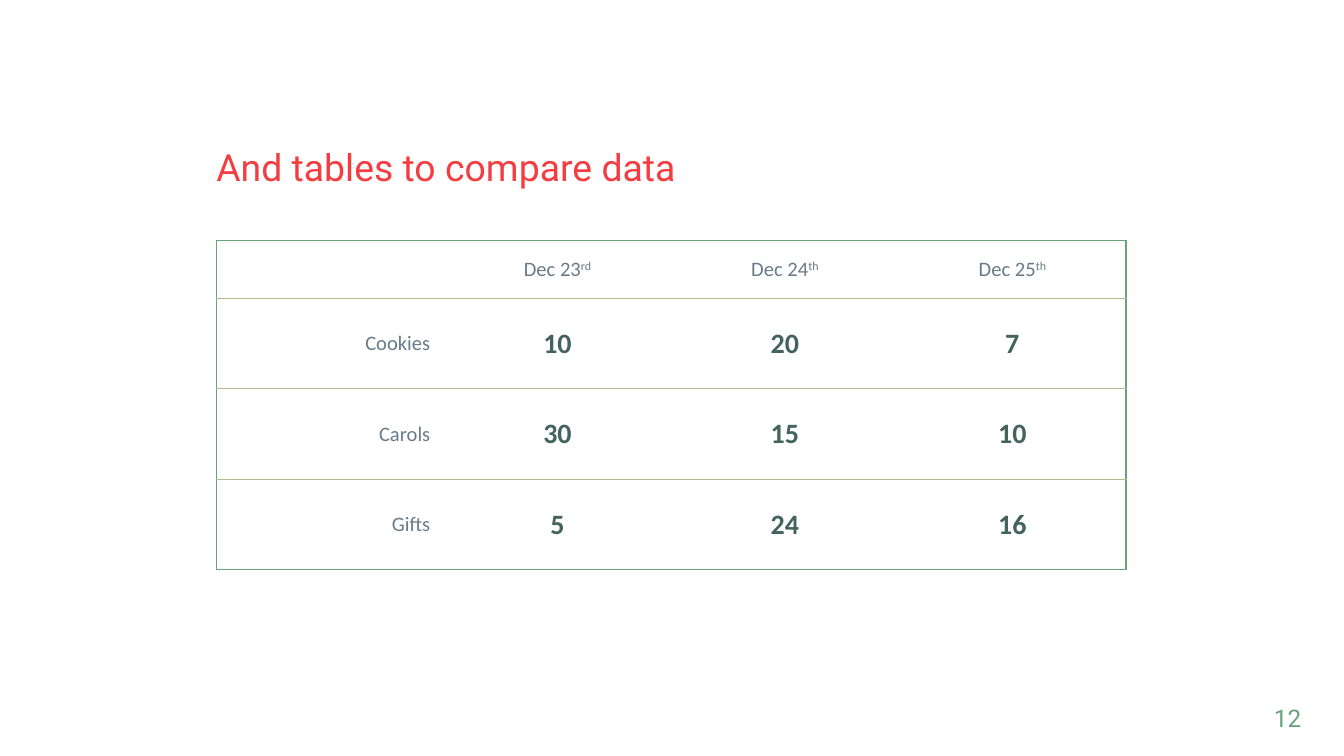
from typing import NamedTuple

from lxml import etree
from pptx import Presentation
from pptx.dml.color import RGBColor
from pptx.enum import text
from pptx.oxml import ns
from pptx.util import Inches, Pt

RED, GREEN, LIME = "F33D41", "68A27A", "ABC08E"
GREY, DARK_GREEN = "667C89", "43635C"
ALIGN = text.PP_ALIGN


class Style(NamedTuple):
    font: str
    size: float
    color: str
    bold: bool = False


class TableRow(NamedTuple):
    label: str
    values: tuple[int, ...]


TITLE = Style("Roboto", 20, RED)
PAGE_NUMBER = Style("Roboto", 13, GREEN)
LABEL = Style("Calibri", 11, GREY)
VALUE = Style("Calibri", 15, DARK_GREEN, True)

DAYS = [("Dec 23", "rd"), ("Dec 24", "th"), ("Dec 25", "th")]
ROWS = [
    TableRow("Cookies", (10, 20, 7)),
    TableRow("Carols", (30, 15, 10)),
    TableRow("Gifts", (5, 24, 16)),
]
SLIDE_WIDTH = 10
TABLE_LEFT, TABLE_TOP, TABLE_WIDTH, TABLE_HEIGHT = 1.61, 1.79, 6.77, 2.45
HEADER_HEIGHT = 0.43


def rgb(color: str) -> RGBColor:
    return RGBColor.from_string(color)


def format_font(font, style: Style) -> None:
    font.name = style.font
    font.size = Pt(style.size)
    font.bold = style.bold
    font.color.rgb = rgb(style.color)


def add_text(slide, box: tuple, content: str, style: Style, alignment,
             anchor, inset: float) -> None:
    shape = slide.shapes.add_textbox(*(Inches(length) for length in box))
    frame = shape.text_frame
    frame.word_wrap = True
    frame.vertical_anchor = anchor
    frame.margin_left = frame.margin_right = Inches(inset)
    frame.margin_top = frame.margin_bottom = Inches(inset)
    frame.text = content
    paragraph = frame.paragraphs[0]
    paragraph.alignment = alignment
    if style is TITLE:
        paragraph.line_spacing = 0.9
    format_font(paragraph.runs[0].font, style)


def set_border(cell, side: str, color: str | None) -> None:
    properties = cell._tc.get_or_add_tcPr()
    line = etree.SubElement(properties, ns.qn(f"a:ln{side}"), w=str(Pt(0.75)))
    if color is None:
        etree.SubElement(line, ns.qn("a:noFill"))
    else:
        fill = etree.SubElement(line, ns.qn("a:solidFill"))
        etree.SubElement(fill, ns.qn("a:srgbClr"), val=color)


def fill_cell(cell, content: str, style: Style, alignment, suffix: str = "") -> None:
    cell.vertical_anchor = text.MSO_ANCHOR.MIDDLE
    cell.margin_left = cell.margin_right = Inches(0.1)
    cell.margin_top = cell.margin_bottom = Inches(0.07)
    paragraph = cell.text_frame.paragraphs[0]
    paragraph.text = content
    paragraph.alignment = alignment
    if suffix:
        superscript = paragraph.add_run()
        superscript.text = suffix
        superscript._r.get_or_add_rPr().set("baseline", "30000")
    format_font(paragraph.font, style)
    for run in paragraph.runs:
        format_font(run.font, style)


def add_comparison_table(slide) -> None:
    row_count, column_count = len(ROWS) + 1, len(DAYS) + 1
    table = slide.shapes.add_table(
        row_count, column_count, Inches(TABLE_LEFT), Inches(TABLE_TOP),
        Inches(TABLE_WIDTH), Inches(TABLE_HEIGHT)).table
    table.first_row = table.horz_banding = False
    row_height = (TABLE_HEIGHT - HEADER_HEIGHT) / len(ROWS)
    for index, row in enumerate(table.rows):
        row.height = Inches(row_height if index else HEADER_HEIGHT)

    # Header row
    fill_cell(table.cell(0, 0), "", LABEL, ALIGN.RIGHT)
    for column, (day, suffix) in enumerate(DAYS, 1):
        fill_cell(table.cell(0, column), day, LABEL, ALIGN.CENTER, suffix)

    # Labels and values
    for index, row in enumerate(ROWS, 1):
        fill_cell(table.cell(index, 0), row.label, LABEL, ALIGN.RIGHT)
        for column, value in enumerate(row.values, 1):
            fill_cell(table.cell(index, column), str(value), VALUE, ALIGN.CENTER)

    # Green frame, lime lines between rows
    for row in range(row_count):
        for column in range(column_count):
            cell = table.cell(row, column)
            set_border(cell, "L", GREEN if column == 0 else None)
            set_border(cell, "R", GREEN if column == column_count - 1 else None)
            set_border(cell, "T", GREEN if row == 0 else LIME)
            set_border(cell, "B", GREEN if row == row_count - 1 else LIME)
            cell.fill.background()


def main() -> None:
    presentation = Presentation()
    presentation.slide_width = Inches(SLIDE_WIDTH)
    presentation.slide_height = Inches(SLIDE_WIDTH * 9 / 16)
    slide = presentation.slides.add_slide(presentation.slide_layouts[6])

    add_text(slide, (TABLE_LEFT, 1.01, TABLE_WIDTH, 0.5),
             "And tables to compare data",
             TITLE, ALIGN.LEFT, text.MSO_ANCHOR.MIDDLE, 0)
    add_comparison_table(slide)
    add_text(slide, (9.18, 5.13, 0.6, 0.29), "12",
             PAGE_NUMBER, ALIGN.RIGHT, text.MSO_ANCHOR.TOP, 0.1)
    presentation.save("out.pptx")


if __name__ == "__main__":
    main()
